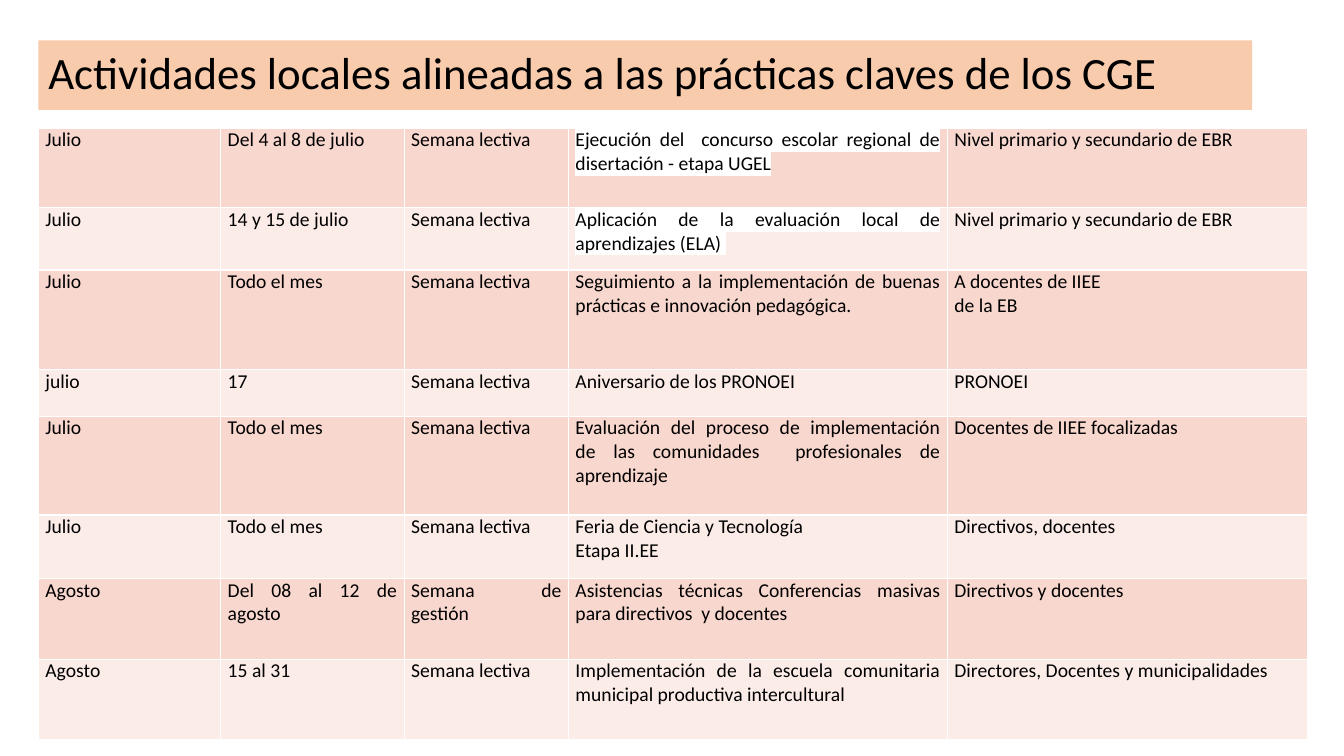
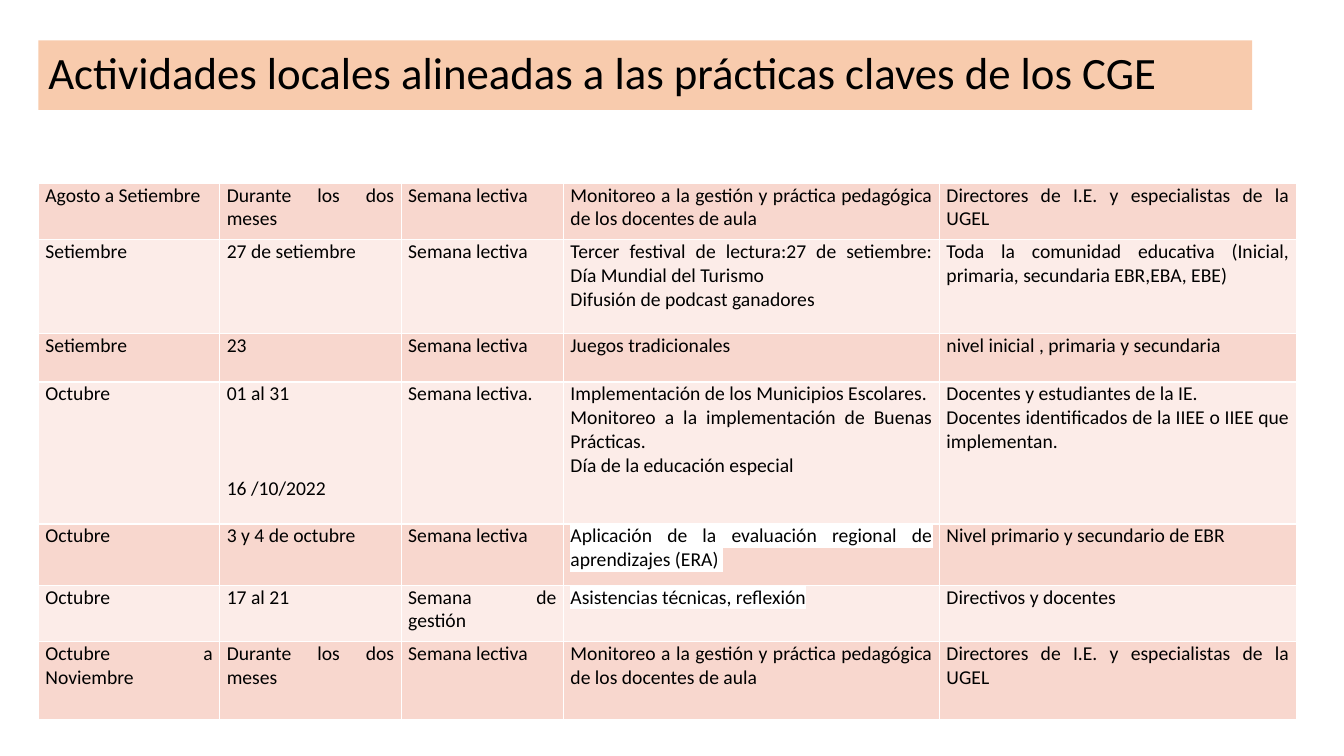
from dataclasses import dataclass

from lxml.etree import SubElement as Sub
from pptx import Presentation
from pptx.dml.color import RGBColor as RGB
from pptx.enum.shapes import MSO_SHAPE as Shape
from pptx.enum.text import MSO_ANCHOR as Anchor, PP_ALIGN as Align
from pptx.oxml.ns import qn
from pptx.util import Pt


@dataclass(frozen=True)
class Theme:
    font: str = "Calibri"
    head: int = 32
    body: int = 14
    ink: str = "000000"
    white: str = "FFFFFF"
    band: str = "F8CBAD"
    rows: tuple = ("F8D7CE", "FCECE8")


T = Theme()
TITLE = "Actividades locales alineadas a las prácticas claves de los CGE"
LEFT = 27.4
DATE, TASK = 1, 3  # column numbers
GAP = 51  # space between two dates in one cell
WEEK = "Semana lectiva"
REST = "Semana de gestión"
MONTH = "Todo el mes"
LEVEL = "Nivel primario y secundario de EBR"
BOTH = "Durante los dos meses"
WATCH = "Monitoreo a la gestión y práctica pedagógica de los docentes de aula"
HEADS = "Directores de I.E. y especialistas de la UGEL"

# Each row: height, then the five cells; "\n" starts a paragraph.
# "lit" names the rows whose task is marked in white.
PAGES = [
    {
        "top": 91.4,
        "cols": (130.3, 131, 117.4, 270.7, 257),
        "lit": (0, 1),
        "rows": [
            (56.9, "Julio", "Del 4 al 8 de julio", WEEK,
             "Ejecución del  concurso escolar regional de disertación - etapa UGEL",
             LEVEL),
            (44.6, "Julio", "14 y 15 de julio", WEEK,
             "Aplicación de la evaluación local de aprendizajes (ELA) ", LEVEL),
            (71.3, "Julio", MONTH, WEEK,
             "Seguimiento a la implementación de buenas prácticas e innovación "
             "pedagógica.",
             "A docentes de IIEE\nde la EB"),
            (33.1, "julio", "17", WEEK, "Aniversario de los PRONOEI", "PRONOEI"),
            (70.6, "Julio", MONTH, WEEK,
             "Evaluación del proceso de implementación de las comunidades  "
             "profesionales de aprendizaje",
             "Docentes de IIEE focalizadas"),
            (45.4, "Julio", MONTH, WEEK,
             "Feria de Ciencia y Tecnología\nEtapa II.EE",
             "Directivos, docentes"),
            (57.6, "Agosto", "Del 08 al 12 de agosto", REST,
             "Asistencias técnicas Conferencias masivas para directivos  y docentes",
             "Directivos y docentes"),
            (57.6, "Agosto", "15 al 31", WEEK,
             "Implementación de la escuela comunitaria municipal productiva "
             "intercultural",
             "Directores, Docentes y municipalidades"),
        ],
    },
    {
        "top": 131,
        "cols": (129.6, 129.6, 115.9, 268.6, 254.9),
        "lit": (4, 5),
        "rows": [
            (40.3, "Agosto a Setiembre", BOTH, WEEK, WATCH, HEADS),
            (67, "Setiembre", "27 de setiembre", WEEK,
             "Tercer festival de lectura:27 de setiembre: Día Mundial del Turismo\n"
             "Difusión de podcast ganadores",
             "Toda la comunidad educativa (Inicial, primaria, secundaria "
             "EBR,EBA, EBE)"),
            (34.6, "Setiembre", "23", WEEK, "Juegos tradicionales",
             "nivel inicial , primaria y secundaria"),
            (101.5, "Octubre", "01 al 31\n16 /10/2022", "Semana lectiva.",
             "Implementación de los Municipios Escolares.\n"
             "Monitoreo a la implementación de Buenas Prácticas.\n"
             "Día de la educación especial",
             "Docentes y estudiantes de la IE.\n"
             "Docentes identificados de la IIEE o IIEE que implementan."),
            (43.9, "Octubre", "3 y 4 de octubre", WEEK,
             "Aplicación de la evaluación regional de aprendizajes (ERA) ", LEVEL),
            (40.3, "Octubre", "17 al 21", REST,
             "Asistencias técnicas, reflexión", "Directivos y docentes"),
            (55.4, "Octubre a Noviembre", BOTH, WEEK, WATCH, HEADS),
        ],
    },
]


def style(para, size):
    para.alignment = Align.JUSTIFY
    para.font.name = T.font
    para.font.size = Pt(size)
    para.font.color.rgb = RGB.from_string(T.ink)


def paint(cell, color):
    """Give a cell its margins, white borders and fill."""
    cell.margin_left = cell.margin_right = Pt(5)
    cell.margin_top = cell.margin_bottom = Pt(0)
    props = cell._tc.get_or_add_tcPr()
    for side in ("lnL", "lnR", "lnT", "lnB"):
        line = Sub(props, qn(f"a:{side}"), w=str(Pt(1)))
        Sub(Sub(line, qn("a:solidFill")), qn("a:srgbClr"), val=T.white)
    cell.fill.solid()
    cell.fill.fore_color.rgb = RGB.from_string(color)


deck = Presentation()
deck.slide_width, deck.slide_height = Pt(960), Pt(540)

for page in PAGES:
    slide = deck.slides.add_slide(deck.slide_layouts[6])

    cols, rows = page["cols"], page["rows"]
    table = slide.shapes.add_table(
        len(rows), len(cols), Pt(LEFT), Pt(page["top"]),
        Pt(sum(cols)), Pt(sum(row[0] for row in rows))).table
    table.first_row = table.horz_banding = False
    for col, width in zip(table.columns, cols):
        col.width = Pt(width)

    for r, (height, *texts) in enumerate(rows):
        table.rows[r].height = Pt(height)
        for c, text in enumerate(texts):
            cell = table.cell(r, c)
            paint(cell, T.rows[r % 2])
            cell.text = text
            for n, para in enumerate(cell.text_frame.paragraphs):
                style(para, T.body)
                if c == DATE and n:
                    para.space_before = Pt(GAP)
                if c == TASK and r in page["lit"]:
                    props = para.runs[0]._r.get_or_add_rPr()
                    mark = Sub(props, qn("a:highlight"))
                    Sub(mark, qn("a:srgbClr"), val=T.white)

    band = slide.shapes.add_shape(
        Shape.RECTANGLE, Pt(LEFT), Pt(28.8), Pt(867), Pt(49.7))
    band.shadow.inherit = False
    band.fill.solid()
    band.fill.fore_color.rgb = RGB.from_string(T.band)
    band.line.fill.background()
    frame = band.text_frame
    frame.word_wrap = True
    frame.vertical_anchor = Anchor.MIDDLE
    frame.text = TITLE
    style(frame.paragraphs[0], T.head)
    frame.paragraphs[0].line_spacing = 0.9

deck.save("out.pptx")
